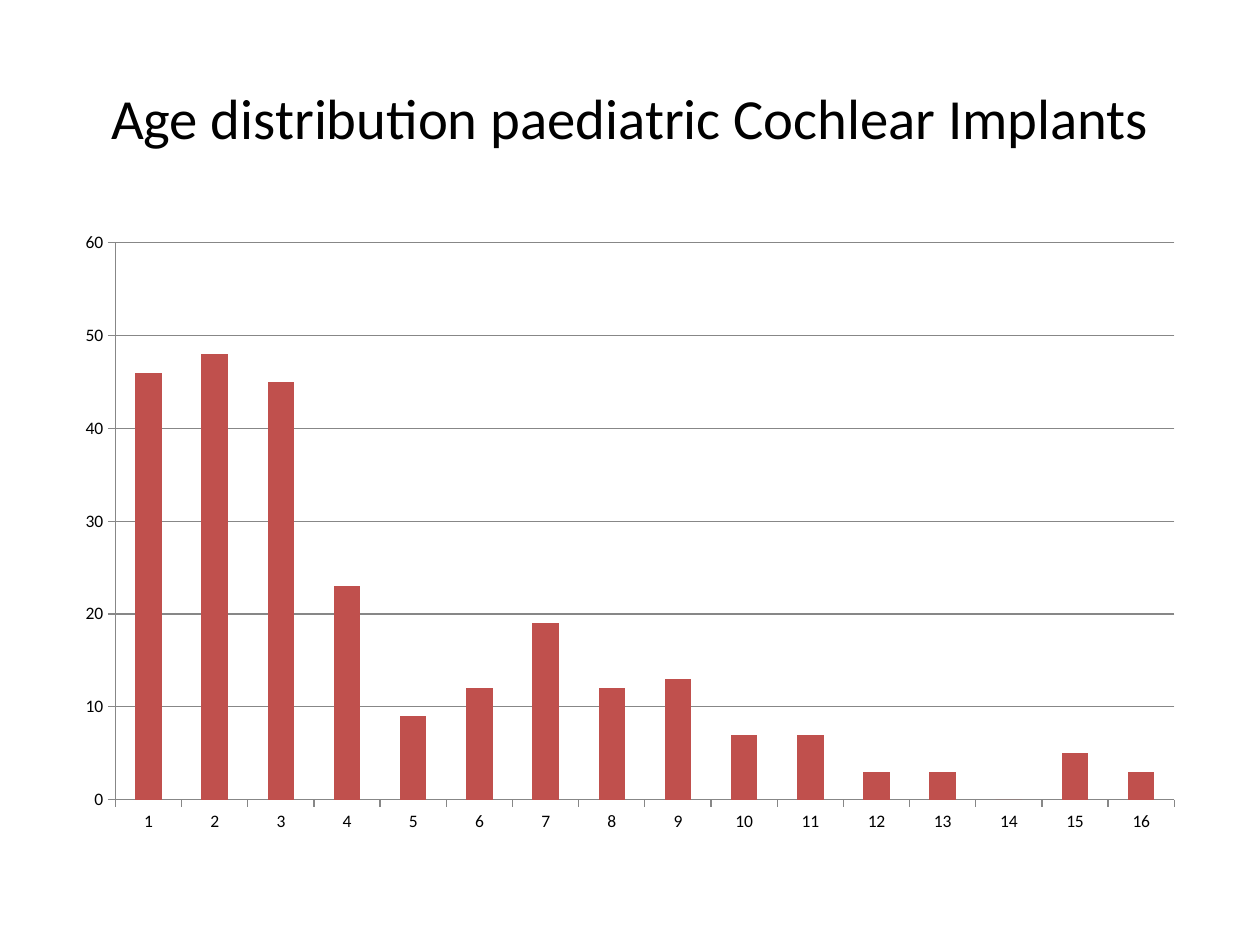
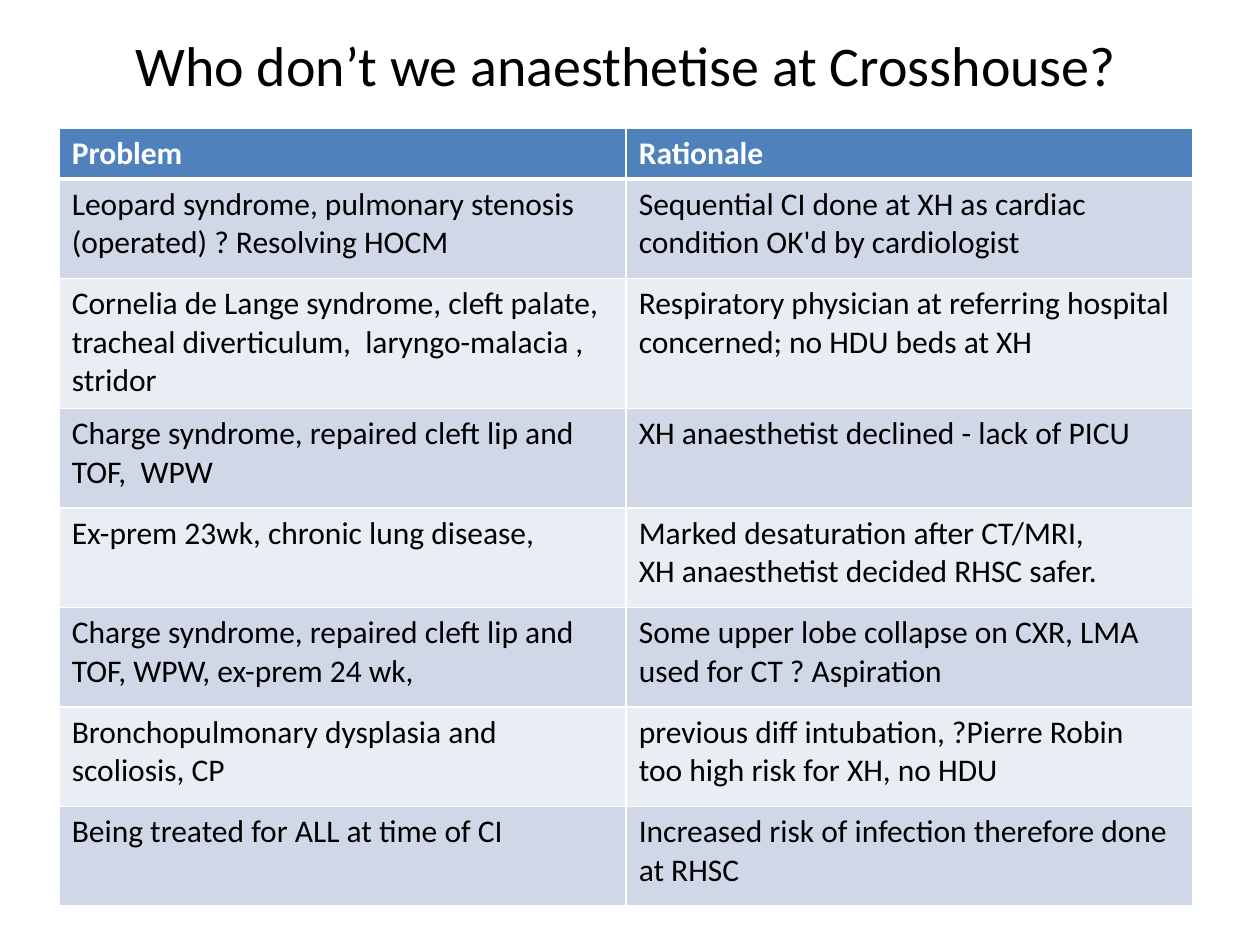
from lxml import etree
from pptx import Presentation
from pptx.chart.data import CategoryChartData
from pptx.dml.color import RGBColor
from pptx.enum.chart import XL_CHART_TYPE as ChartType, XL_TICK_MARK as Tick
from pptx.enum.text import MSO_ANCHOR as Anchor, PP_ALIGN as Align
from pptx.oxml.ns import qn
from pptx.util import Emu, Pt

PX = 9144  # 100 px to the inch
FONT = "Calibri"
BLACK = RGBColor(0x00, 0x00, 0x00)
WHITE = RGBColor(0xFF, 0xFF, 0xFF)
GREY = RGBColor(0x87, 0x87, 0x87)
RED = RGBColor(0xC0, 0x50, 0x4D)
BLUE = RGBColor(0x4F, 0x81, 0xBD)
BANDS = [RGBColor(0xD0, 0xD8, 0xE8), RGBColor(0xE9, 0xED, 0xF4)]

IMPLANTS_BY_AGE = [46, 48, 45, 23, 9, 12, 19, 12, 13, 7, 7, 3, 3, 0, 5, 3]

HEADER_HEIGHT, ROW_HEIGHT, TALL_ROW_HEIGHT = 40, 79, 103
TALL_ROW = 2
CASES = [
    ("Problem", "Rationale"),
    ("Leopard syndrome, pulmonary stenosis (operated) ? Resolving HOCM",
     "Sequential CI done at XH as cardiac condition OK'd by cardiologist"),
    ("Cornelia de Lange syndrome, cleft palate, tracheal diverticulum,  laryngo-malacia , stridor",
     "Respiratory physician at referring hospital concerned; no HDU beds at XH"),
    ("Charge syndrome, repaired cleft lip and TOF,  WPW",
     "XH anaesthetist declined - lack of PICU"),
    ("Ex-prem 23wk, chronic lung disease,",
     "Marked desaturation after CT/MRI,\nXH anaesthetist decided RHSC safer."),
    ("Charge syndrome, repaired cleft lip and TOF, WPW, ex-prem 24 wk,",
     "Some upper lobe collapse on CXR, LMA used for CT ? Aspiration"),
    ("Bronchopulmonary dysplasia and scoliosis, CP",
     "previous diff intubation, ?Pierre Robin\ntoo high risk for XH, no HDU"),
    ("Being treated for ALL at time of CI",
     "Increased risk of infection therefore done at RHSC"),
]


def px(n):
    return Emu(n * PX)


def box(*lengths):
    return [px(n) for n in lengths]


def set_font(font, size, color, bold=False):
    font.name, font.size, font.bold = FONT, Pt(size), bold
    font.color.rgb = color


def add_slide(prs):
    return prs.slides.add_slide(prs.slide_layouts[6])


def add_title(s, text, left, top, width, height, size):
    tf = s.shapes.add_textbox(*box(left, top, width, height)).text_frame
    tf.word_wrap = True
    tf.vertical_anchor = Anchor.MIDDLE
    p = tf.paragraphs[0]
    p.text = text
    p.alignment = Align.CENTER
    set_font(p.font, size, BLACK)


def style_axis(axis):
    axis.major_tick_mark, axis.minor_tick_mark = Tick.OUTSIDE, Tick.NONE
    axis.format.line.color.rgb = GREY
    axis.format.line.width = Pt(0.75)


def add_column_chart(s, values, left, top, width, height):
    data = CategoryChartData()
    data.categories = [str(age) for age in range(1, len(values) + 1)]
    data.add_series("Series 1", values)
    chart = s.shapes.add_chart(ChartType.COLUMN_CLUSTERED, *box(left, top, width, height), data).chart
    chart.has_legend = chart.has_title = False
    set_font(chart.font, 10, BLACK)
    for axis in (chart.category_axis, chart.value_axis):
        style_axis(axis)
    value_axis = chart.value_axis
    value_axis.minimum_scale, value_axis.maximum_scale, value_axis.major_unit = 0, 60, 10
    value_axis.has_major_gridlines = True
    value_axis.major_gridlines.format.line.color.rgb = GREY
    value_axis.major_gridlines.format.line.width = Pt(0.75)
    plot = chart.plots[0]
    plot.gap_width, plot.vary_by_categories = 150, False
    fill = plot.series[0].format.fill
    fill.solid()
    fill.fore_color.rgb = RED


def set_borders(cell, bottom):
    """White lines of 1 pt, with the given width in points below the cell."""
    tc_pr = cell._tc.get_or_add_tcPr()
    for i, (side, width) in enumerate(zip("LRTB", (1, 1, 1, bottom))):
        line = etree.Element(qn(f"a:ln{side}"), w=str(Pt(width)))
        solid = etree.SubElement(line, qn("a:solidFill"))
        etree.SubElement(solid, qn("a:srgbClr"), val=str(WHITE))
        tc_pr.insert(i, line)  # lines come before the fill


def fill_cell(cell, text, row):
    header = row == 0
    cell.text = text
    for p in cell.text_frame.paragraphs:
        set_font(p.font, 18, WHITE if header else BLACK, bold=header)
    cell.fill.solid()
    cell.fill.fore_color.rgb = BLUE if header else BANDS[(row - 1) % 2]
    set_borders(cell, bottom=3 if header else 1)


def add_case_table(s, left, top, width):
    heights = [HEADER_HEIGHT] + [ROW_HEIGHT] * (len(CASES) - 1)
    heights[TALL_ROW] = TALL_ROW_HEIGHT
    table = s.shapes.add_table(len(CASES), 2, *box(left, top, width, sum(heights))).table
    for r, (texts, height) in enumerate(zip(CASES, heights)):
        table.rows[r].height = px(height)
        for c, text in enumerate(texts):
            fill_cell(table.cell(r, c), text, r)


def main():
    prs = Presentation()
    prs.slide_width, prs.slide_height = box(1000, 750)

    s = add_slide(prs)
    add_title(s, "Age distribution paediatric Cochlear Implants", 50, 30, 900, 125, 32.4)
    add_column_chart(s, IMPLANTS_BY_AGE, 50, 175, 900, 495)

    s = add_slide(prs)
    add_title(s, "Who don’t we anaesthetise at Crosshouse?", 47, 0, 900, 102, 32)
    add_case_table(s, 47, 102, 900)

    prs.save("out.pptx")


if __name__ == "__main__":
    main()
